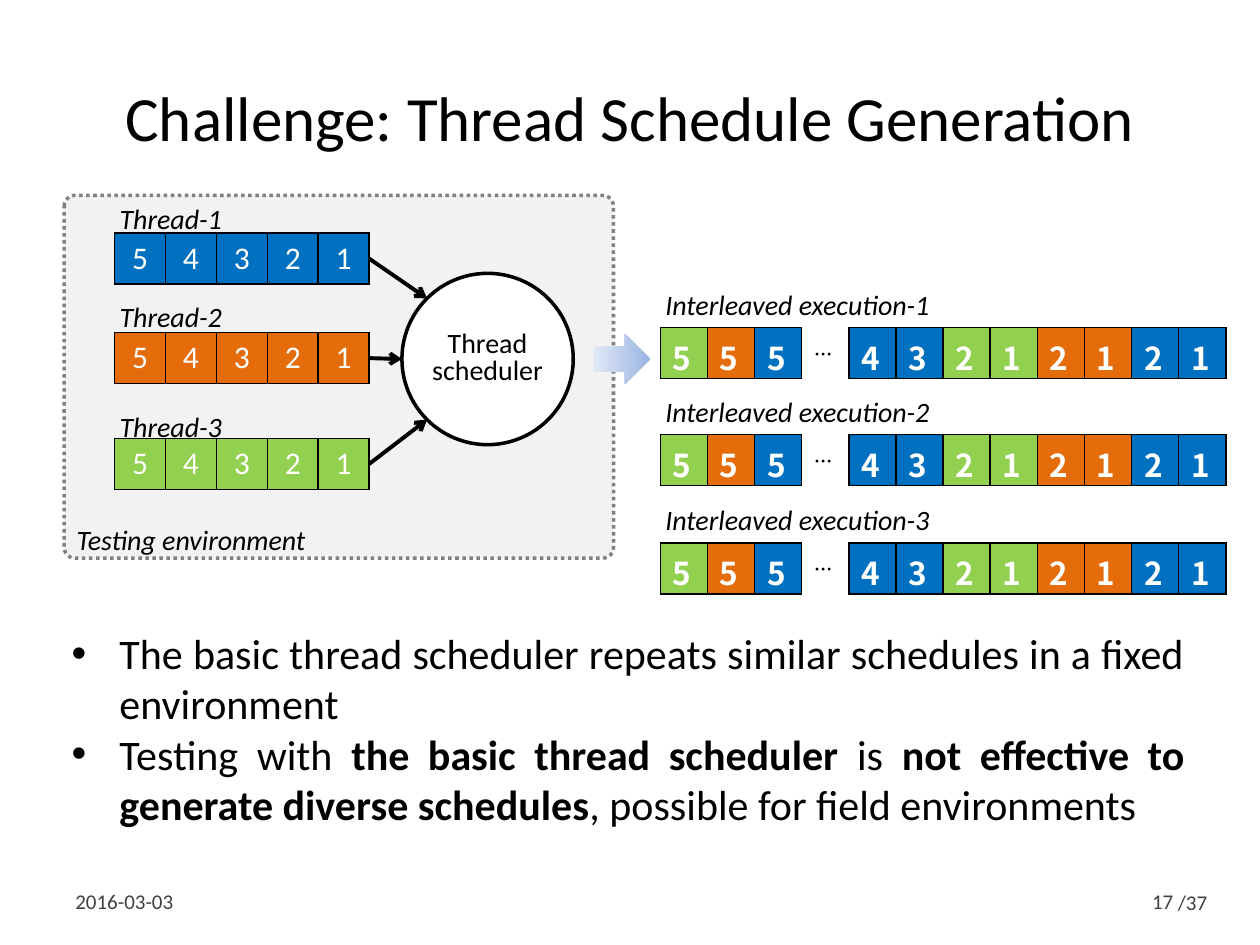
"""Build the slide on thread schedule generation."""
import dataclasses
import math
import typing

import lxml.etree
import pptx
import pptx.dml.color
import pptx.enum.dml
import pptx.enum.shapes
import pptx.enum.text
import pptx.oxml.ns
import pptx.util

COLORS = {"black": "000000", "white": "FFFFFF", "footer": "404040", "panel": "F2F2F2",
          "edge": "808080", "blue": "0070C0", "orange": "E46C0A", "green": "92D050",
          "pale": "E1E8F5", "deep": "9AB5E4"}
ALIGN = pptx.enum.text.PP_ALIGN
ANCHOR = pptx.enum.text.MSO_ANCHOR
SHAPE = pptx.enum.shapes.MSO_SHAPE
WIDTH, HEIGHT = pptx.util.Inches(10), pptx.util.Inches(7.5)
ROW_HEIGHT = 5.4
LABEL_HEIGHT = 4.93
LABEL_INSET = pptx.util.Inches(0.04)


@dataclasses.dataclass(frozen=True)
class Box:
    """A rectangle in percent of the slide's width and height."""
    left: float
    top: float
    width: float
    height: float

    def emu(self) -> tuple[int, int, int, int]:
        return across(self.left), down(self.top), across(self.width), down(self.height)


@dataclasses.dataclass(frozen=True)
class Style:
    """How a run of text looks."""
    size: float
    color: str = "black"
    bold: bool = False
    italic: bool = False
    name: str = "Calibri"
    baseline: int = 0


@dataclasses.dataclass(frozen=True)
class Thread:
    """A thread's queue of steps and the place of its name."""
    title: str
    color: str
    label_top: float
    top: float
    target_angle: int


@dataclasses.dataclass(frozen=True)
class Execution:
    """One interleaved run of all the threads."""
    title: str
    top: float
    bottom_margin: float


class Step(typing.NamedTuple):
    text: str
    color: str


LABEL = Style(16, italic=True)
FOOTER = Style(12, "footer")
BODY = Style(24)
STRONG = Style(24, bold=True)
QUEUED = Style(18, "white")
EXECUTED = Style(18, "white", bold=True, name="Noto Sans CJK KR")
SKIPPED = dataclasses.replace(EXECUTED, color="black", baseline=30000)
GAP = Step("…", "white")

THREADS = [Thread("Thread-1", "blue", 20.67, 24.67, 225),
           Thread("Thread-2", "orange", 31.07, 35.2, 180),
           Thread("Thread-3", "green", 42.67, 46.4, 135)]
EXECUTIONS = [Execution("Interleaved execution-1", 34.67, 0.05),
              Execution("Interleaved execution-2", 46, 0),
              Execution("Interleaved execution-3", 57.47, 0)]
SCHEDULE = [Step("5", "green"), Step("5", "orange"), Step("5", "blue"), GAP,
            Step("4", "blue"), Step("3", "blue"), Step("2", "green"), Step("1", "green"),
            Step("2", "orange"), Step("1", "orange"), Step("2", "blue"), Step("1", "blue")]
BULLETS = [
    [("The basic thread scheduler repeats similar schedules in a fixed environment", BODY)],
    [("Testing with ", BODY), ("the basic thread scheduler", STRONG), (" is ", BODY),
     ("not effective to generate diverse schedules", STRONG),
     (", possible for field environments", BODY)],
]
SCHEDULER = Box(31.9, 28.93, 13.6, 18.13)


def across(share: float) -> int:
    return round(WIDTH * share / 100)


def down(share: float) -> int:
    return round(HEIGHT * share / 100)


def rgb(color: str) -> pptx.dml.color.RGBColor:
    return pptx.dml.color.RGBColor.from_string(COLORS[color])


def apply(target: typing.Any, **values: typing.Any) -> None:
    for attribute, value in values.items():
        setattr(target, attribute, value)


def child(parent: typing.Any, tag: str, **attributes: str) -> typing.Any:
    return lxml.etree.SubElement(parent, pptx.oxml.ns.qn(tag), attributes)


def write(paragraph: typing.Any, text: str, style: Style) -> None:
    run = paragraph.add_run()
    run.text = text
    apply(run.font, size=pptx.util.Pt(style.size), bold=style.bold,
          italic=style.italic, name=style.name)
    run.font.color.rgb = rgb(style.color)
    properties = run._r.get_or_add_rPr()
    child(properties, "a:ea", typeface=style.name)
    if style.baseline:
        properties.set("baseline", str(style.baseline))


def add_text(slide: typing.Any, box: Box, text: str, style: Style,
             align: typing.Any = ALIGN.LEFT, **frame_values: typing.Any) -> None:
    frame = slide.shapes.add_textbox(*box.emu()).text_frame
    apply(frame, word_wrap=True, **frame_values)
    frame.paragraphs[0].alignment = align
    write(frame.paragraphs[0], text, style)


def add_shape(slide: typing.Any, kind: typing.Any, box: Box, fill: str,
              edge: typing.Optional[str] = None) -> typing.Any:
    shape = slide.shapes.add_shape(kind, *box.emu())
    shape.shadow.inherit = False
    shape.fill.solid()
    shape.fill.fore_color.rgb = rgb(fill)
    if edge:
        shape.line.color.rgb = rgb(edge)
        shape.line.width = pptx.util.Pt(2)
    else:
        shape.line.fill.background()
    return shape


def add_steps(slide: typing.Any, box: Box, steps: list[Step], style: Style,
              align: typing.Any, bottom_margin: float = 0.05) -> None:
    table = slide.shapes.add_table(1, len(steps), *box.emu()).table
    apply(table, first_row=False, horz_banding=False)
    for column, cell, step in zip(table.columns, table.rows[0].cells, steps):
        column.width = across(box.width / len(steps))
        properties = cell._tc.get_or_add_tcPr()
        for side in "LRTB":
            border = child(properties, f"a:ln{side}", w="12700")
            if step == GAP and side in "TB":
                child(border, "a:noFill")
            else:
                child(child(border, "a:solidFill"), "a:srgbClr", val=COLORS["black"])
        cell.fill.solid()
        cell.fill.fore_color.rgb = rgb(step.color)
        apply(cell, margin_bottom=pptx.util.Inches(bottom_margin),
              vertical_anchor=ANCHOR.MIDDLE if step == GAP else ANCHOR.TOP)
        paragraph = cell.text_frame.paragraphs[0]
        paragraph.alignment = align
        write(paragraph, step.text, SKIPPED if step == GAP else style)


def add_arrow(slide: typing.Any, queue: Box, angle: int) -> None:
    turn = math.radians(angle)
    end_x = SCHEDULER.left + SCHEDULER.width / 2 * (1 + math.cos(turn))
    end_y = SCHEDULER.top + SCHEDULER.height / 2 * (1 + math.sin(turn))
    arrow = slide.shapes.add_connector(
        pptx.enum.shapes.MSO_CONNECTOR.STRAIGHT, across(queue.left + queue.width),
        down(queue.top + queue.height / 2), across(end_x), down(end_y))
    arrow.line.color.rgb = rgb("black")
    arrow.line.width = pptx.util.Pt(2.25)
    child(arrow.line._get_or_add_ln(), "a:tailEnd", type="arrow")
    child(arrow._element.spPr, "a:effectLst")


def add_environment(slide: typing.Any) -> None:
    panel = add_shape(slide, SHAPE.ROUNDED_RECTANGLE, Box(5.1, 20.67, 43.6, 38.4),
                      "panel", "edge")
    panel.adjustments[0] = 0.03
    panel.line.dash_style = pptx.enum.dml.MSO_LINE.ROUND_DOT
    scheduler = add_shape(slide, SHAPE.OVAL, SCHEDULER, "white", "black")
    frame = scheduler.text_frame
    apply(frame, margin_left=0, margin_right=0, margin_top=0, margin_bottom=0,
          vertical_anchor=ANCHOR.MIDDLE)
    for paragraph, word in ((frame.paragraphs[0], "Thread"),
                            (frame.add_paragraph(), "scheduler")):
        apply(paragraph, alignment=ALIGN.CENTER, line_spacing=0.8)
        write(paragraph, word, Style(16))
    for thread in THREADS:
        queue = Box(9.1, thread.top, 20.2, ROW_HEIGHT)
        add_steps(slide, queue, [Step(number, thread.color) for number in "54321"],
                  QUEUED, ALIGN.CENTER)
        add_arrow(slide, queue, thread.target_angle)
        add_text(slide, Box(9.1, thread.label_top, 13.4, LABEL_HEIGHT), thread.title,
                 LABEL, margin_left=LABEL_INSET)
    add_text(slide, Box(5.1, 54.67, 26.4, LABEL_HEIGHT), "Testing environment", LABEL)


def add_executions(slide: typing.Any) -> None:
    outcome = add_shape(slide, SHAPE.RIGHT_ARROW, Box(47.1, 35.33, 4.5, 5.33), "pale")
    outcome.fill.gradient()
    outcome.fill.gradient_angle = 0
    for stop, color in zip(outcome.fill.gradient_stops, ("pale", "deep")):
        stop.color.rgb = rgb(color)
    for execution in EXECUTIONS:
        add_steps(slide, Box(52.4, execution.top, 44.9, ROW_HEIGHT), SCHEDULE, EXECUTED,
                  ALIGN.LEFT, execution.bottom_margin)
        add_text(slide, Box(52.4, execution.top - LABEL_HEIGHT, 31.5, LABEL_HEIGHT),
                 execution.title, LABEL, margin_left=LABEL_INSET)


def add_bullets(slide: typing.Any) -> None:
    frame = slide.shapes.add_textbox(*Box(4.7, 65.73, 90.3, 23.07).emu()).text_frame
    frame.word_wrap = True
    for index, pieces in enumerate(BULLETS):
        paragraph = frame.add_paragraph() if index else frame.paragraphs[0]
        paragraph.alignment = ALIGN.JUSTIFY
        properties = paragraph._p.get_or_add_pPr()
        indent = pptx.util.Inches(0.38)
        properties.set("marL", str(indent))
        properties.set("indent", str(-indent))
        child(properties, "a:buFont", typeface="Arial")
        child(properties, "a:buChar", char="•")
        for text, style in pieces:
            write(paragraph, text, style)


def main() -> None:
    deck = pptx.Presentation()
    apply(deck, slide_width=WIDTH, slide_height=HEIGHT)
    slide = deck.slides.add_slide(deck.slide_layouts[6])
    add_text(slide, Box(0.5, 4, 99, 16.67), "Challenge: Thread Schedule Generation",
             Style(36), ALIGN.CENTER, vertical_anchor=ANCHOR.MIDDLE)
    add_environment(slide)
    add_executions(slide)
    add_bullets(slide)
    add_text(slide, Box(5, 92.67, 10.4, 5.33), "2016-03-03", FOOTER,
             vertical_anchor=ANCHOR.MIDDLE)
    add_text(slide, Box(89.4, 92.67, 4.7, 5.33), "17", FOOTER, ALIGN.RIGHT,
             vertical_anchor=ANCHOR.MIDDLE)
    add_text(slide, Box(92.5, 93.47, 6.3, 4), "/37", FOOTER)
    deck.save("out.pptx")


if __name__ == "__main__":
    main()
